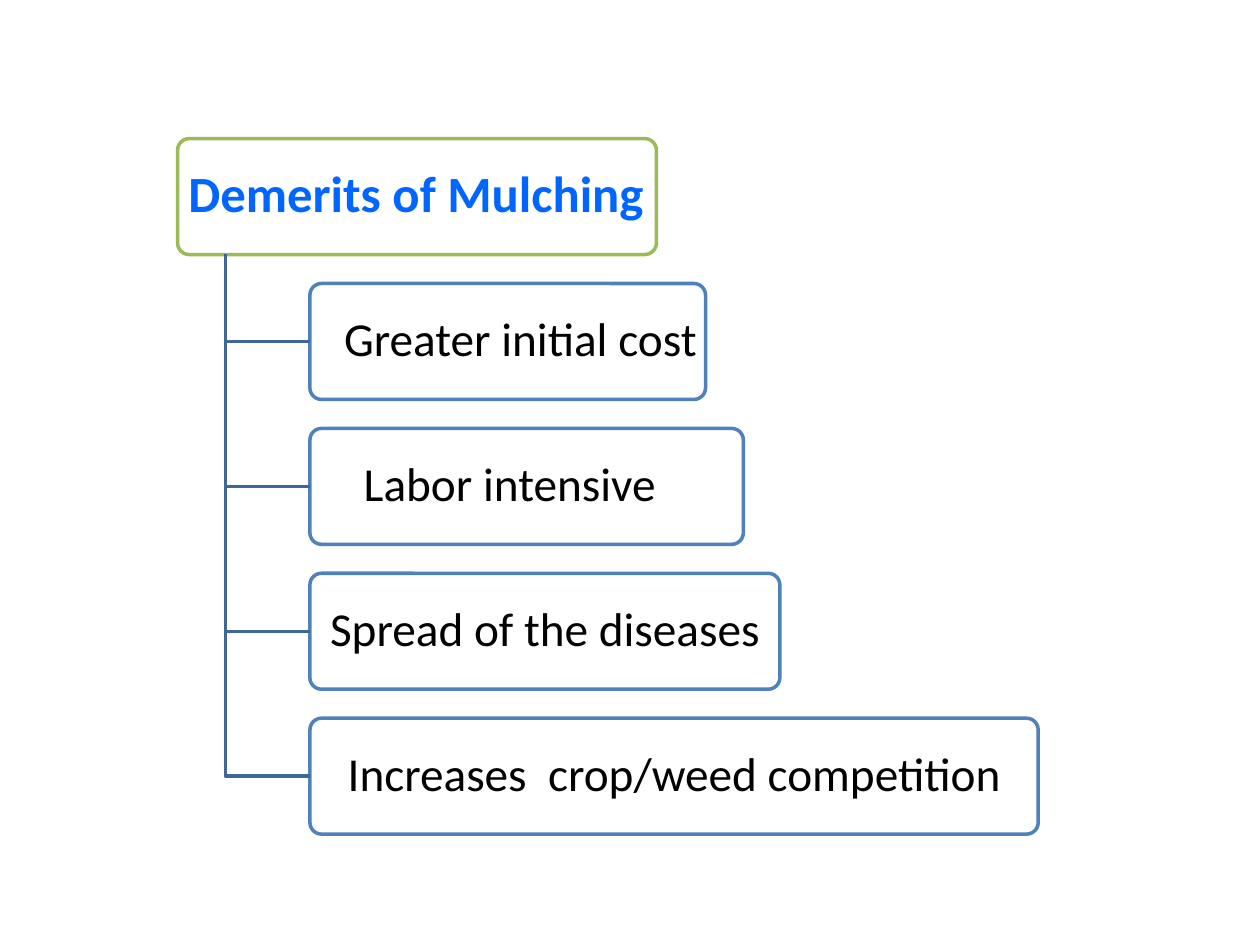
from pptx import Presentation
from pptx.dml.color import RGBColor
from pptx.enum import shapes, text
from pptx.util import Inches, Pt

LEFT, TOP, HEIGHT, PITCH = 1.41, 1.1, 0.92, 1.15
TRUNK_X, BRANCH_X = 1.79, 2.46


def rgb(value):
    return RGBColor.from_string(value)


def format_text(frame, size, color, bold, align, left, right):
    """Centre the frame's text vertically and style its only paragraph."""
    frame.word_wrap = True
    frame.auto_size = text.MSO_AUTO_SIZE.NONE
    frame.vertical_anchor = text.MSO_ANCHOR.MIDDLE
    frame.margin_left, frame.margin_right = Inches(left), Inches(right)
    frame.margin_top = frame.margin_bottom = Inches(0.04)
    paragraph = frame.paragraphs[0]
    paragraph.alignment = align
    paragraph.line_spacing = 0.9
    font = paragraph.runs[0].font
    font.name, font.size, font.bold = "Calibri", Pt(size), bold
    font.color.rgb = rgb(color)


CENTER, START = text.PP_ALIGN.CENTER, text.PP_ALIGN.LEFT

prs = Presentation()
prs.slide_width, prs.slide_height = Inches(10), Inches(7.5)
slide = prs.slides.add_slide(prs.slide_layouts[5])

heading = slide.shapes.title
heading.left, heading.top = Inches(LEFT + 0.02), Inches(TOP + 0.02)
heading.width, heading.height = Inches(3.75), Inches(0.87)
heading.text_frame.text = "Demerits of Mulching"
format_text(heading.text_frame, 29, "0066FF", True, CENTER, 0.06, 0.06)

# label, box left, box width, outline, alignment, left and right inset
boxes = [
    (None, LEFT, 3.8, "9BBB59", CENTER, 0, 0),
    ("Greater initial cost", BRANCH_X, 3.14, "4F81BD", CENTER, 0.24, 0.04),
    ("Labor intensive", BRANCH_X, 3.44, "4F81BD", START, 0.4, 0.08),
    ("Spread of the diseases", BRANCH_X, 3.73, "4F81BD", CENTER, 0.08, 0.08),
    ("Increases  crop/weed competition", BRANCH_X, 5.78, "4F81BD", CENTER, 0.08, 0.08),
]

for row, (label, left, width, outline, align, inset_left, inset_right) in enumerate(boxes):
    top = TOP + row * PITCH
    box = slide.shapes.add_shape(
        shapes.MSO_SHAPE.ROUNDED_RECTANGLE,
        Inches(left), Inches(top), Inches(width), Inches(HEIGHT))
    box.adjustments[0] = 0.1
    box.shadow.inherit = False
    box.line.color.rgb = rgb(outline)
    box.line.width = Pt(2)
    if label is None:
        box.fill.background()  # the heading shows through
        continue
    box.fill.solid()
    box.fill.fore_color.rgb = rgb("FFFFFF")
    box.text_frame.text = label
    format_text(box.text_frame, 27, "000000", False, align, inset_left, inset_right)

    middle = top + HEIGHT / 2
    builder = slide.shapes.build_freeform(Inches(TRUNK_X), Inches(TOP + HEIGHT))
    builder.add_line_segments(
        [(Inches(TRUNK_X), Inches(middle)), (Inches(BRANCH_X), Inches(middle))],
        close=False)
    branch = builder.convert_to_shape()
    branch.shadow.inherit = False
    branch.fill.background()
    branch.line.color.rgb = rgb("3F6797")
    branch.line.width = Pt(2)

prs.save("out.pptx")
